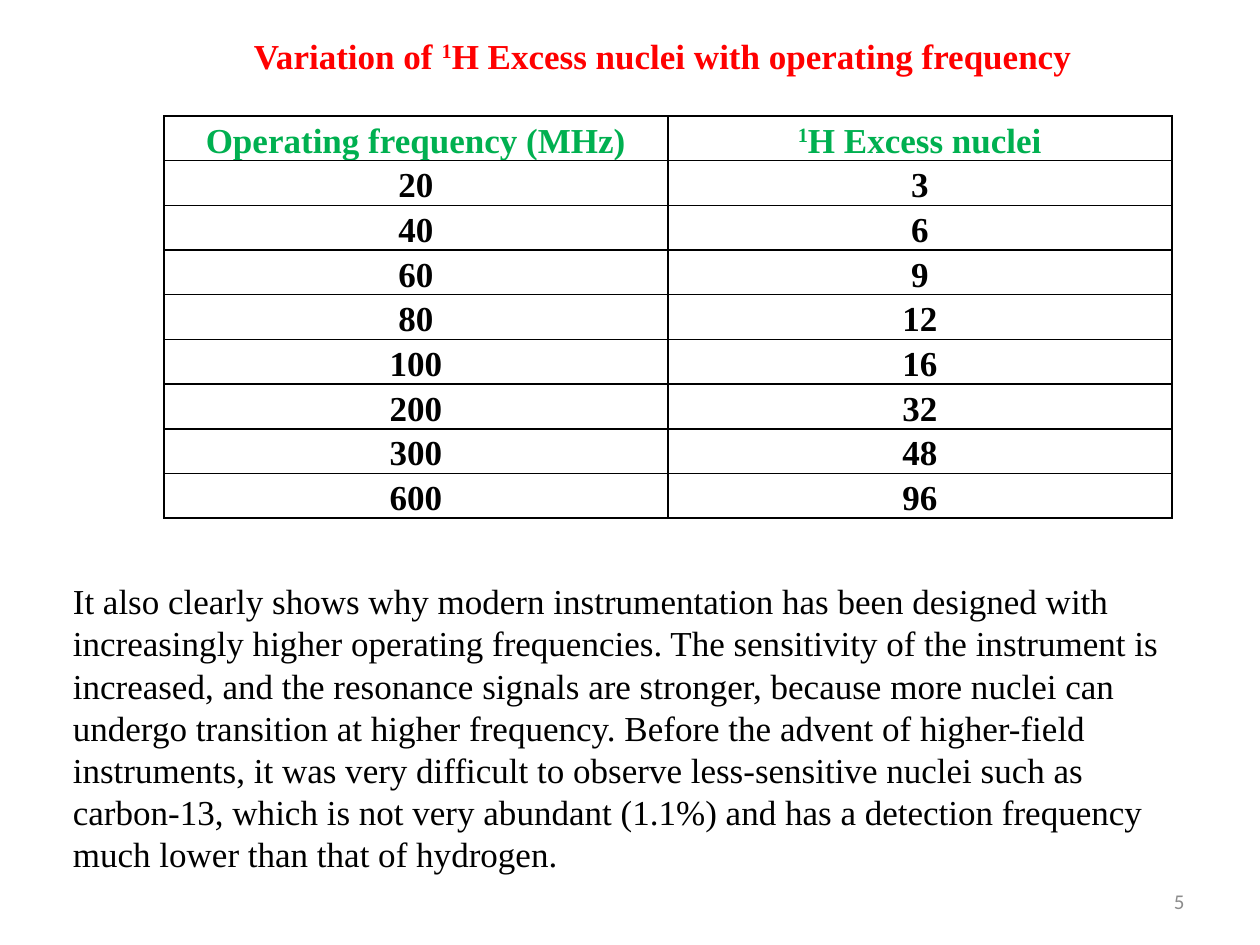
from lxml.etree import SubElement
from pptx import Presentation
from pptx.dml.color import RGBColor
from pptx.enum.text import MSO_ANCHOR, MSO_AUTO_SIZE, PP_ALIGN
from pptx.oxml.ns import qn
from pptx.util import Inches, Pt

COLORS = {"title": "FF0000", "header": "00B050", "text": "000000",
          "border": "000000", "number": "8C8C8C"}
SERIF = "Times New Roman"

HEADERS = ["Operating frequency (MHz)", "^1^H Excess nuclei"]
EXCESS_NUCLEI = [(20, 3), (40, 6), (60, 9), (80, 12),
                 (100, 16), (200, 32), (300, 48), (600, 96)]
EXPLANATION = (
    "It also clearly shows why modern instrumentation has been designed with "
    "increasingly higher operating frequencies. The sensitivity of the instrument "
    "is increased, and the resonance signals are stronger, because more nuclei can "
    "undergo transition at higher frequency. Before the advent of higher-field "
    "instruments, it was very difficult to observe less-sensitive nuclei such as "
    "carbon-13, which is not very abundant (1.1%) and has a detection frequency "
    "much lower than that of hydrogen."
)


def write(paragraph, text, color, size=20, bold=False, font=SERIF, align=PP_ALIGN.LEFT):
    """Fill a paragraph; parts between carets become superscript."""
    paragraph.alignment = align
    paragraph.font.name = font
    paragraph.font.size = Pt(size)
    paragraph.font.bold = bold
    paragraph.font.color.rgb = RGBColor.from_string(COLORS[color])
    for index, part in enumerate(text.split("^")):
        if part:
            run = paragraph.add_run()
            run.text = part
            if index % 2:
                run._r.get_or_add_rPr().set("baseline", "30000")


def add_title(slide, text):
    title = slide.shapes.title
    title.left, title.top = Inches(1.85), Inches(0.22)
    title.width, title.height = Inches(6.82), Inches(0.44)
    frame = title.text_frame
    frame.word_wrap = False
    frame.auto_size = MSO_AUTO_SIZE.NONE
    frame.vertical_anchor = MSO_ANCHOR.TOP
    write(frame.paragraphs[0], text, "title", bold=True, align=PP_ALIGN.CENTER)


def add_text(slide, left, top, width, height, text, color, **style):
    box = slide.shapes.add_textbox(Inches(left), Inches(top), Inches(width), Inches(height))
    frame = box.text_frame
    frame.word_wrap = True
    frame.vertical_anchor = MSO_ANCHOR.MIDDLE
    write(frame.paragraphs[0], text, color, **style)


def add_borders(cell):
    properties = cell._tc.get_or_add_tcPr()
    for side in ("lnL", "lnR", "lnT", "lnB"):
        line = SubElement(properties, qn(f"a:{side}"), w=str(Pt(1)))
        fill = SubElement(line, qn("a:solidFill"))
        SubElement(fill, qn("a:srgbClr"), val=COLORS["border"])


def add_frequency_table(slide):
    rows = [HEADERS, *EXCESS_NUCLEI]
    table = slide.shapes.add_table(len(rows), len(HEADERS), Inches(1.3), Inches(0.92),
                                   Inches(8), Inches(0.33 * len(rows))).table
    table.first_row = table.horz_banding = False
    for r, values in enumerate(rows):
        for c, value in enumerate(values):
            cell = table.cell(r, c)
            cell.margin_left = cell.margin_right = Inches(0.07)
            cell.margin_top = cell.margin_bottom = 0
            add_borders(cell)
            cell.fill.background()
            paragraph = cell.text_frame.paragraphs[0]
            paragraph.line_spacing = 1.15
            write(paragraph, str(value), "text" if r else "header",
                  bold=True, align=PP_ALIGN.CENTER)


def main():
    prs = Presentation()
    prs.slide_width, prs.slide_height = Inches(10), Inches(7.5)
    slide = prs.slides.add_slide(prs.slide_layouts[5])
    add_title(slide, "Variation of ^1^H Excess nuclei with operating frequency")
    add_frequency_table(slide)
    add_text(slide, 0.48, 4.54, 9.21, 2.46, EXPLANATION, "text")
    add_text(slide, 7.17, 6.95, 2.33, 0.4, "5", "number",
             size=12, font="Calibri", align=PP_ALIGN.RIGHT)
    prs.save("out.pptx")


if __name__ == "__main__":
    main()
